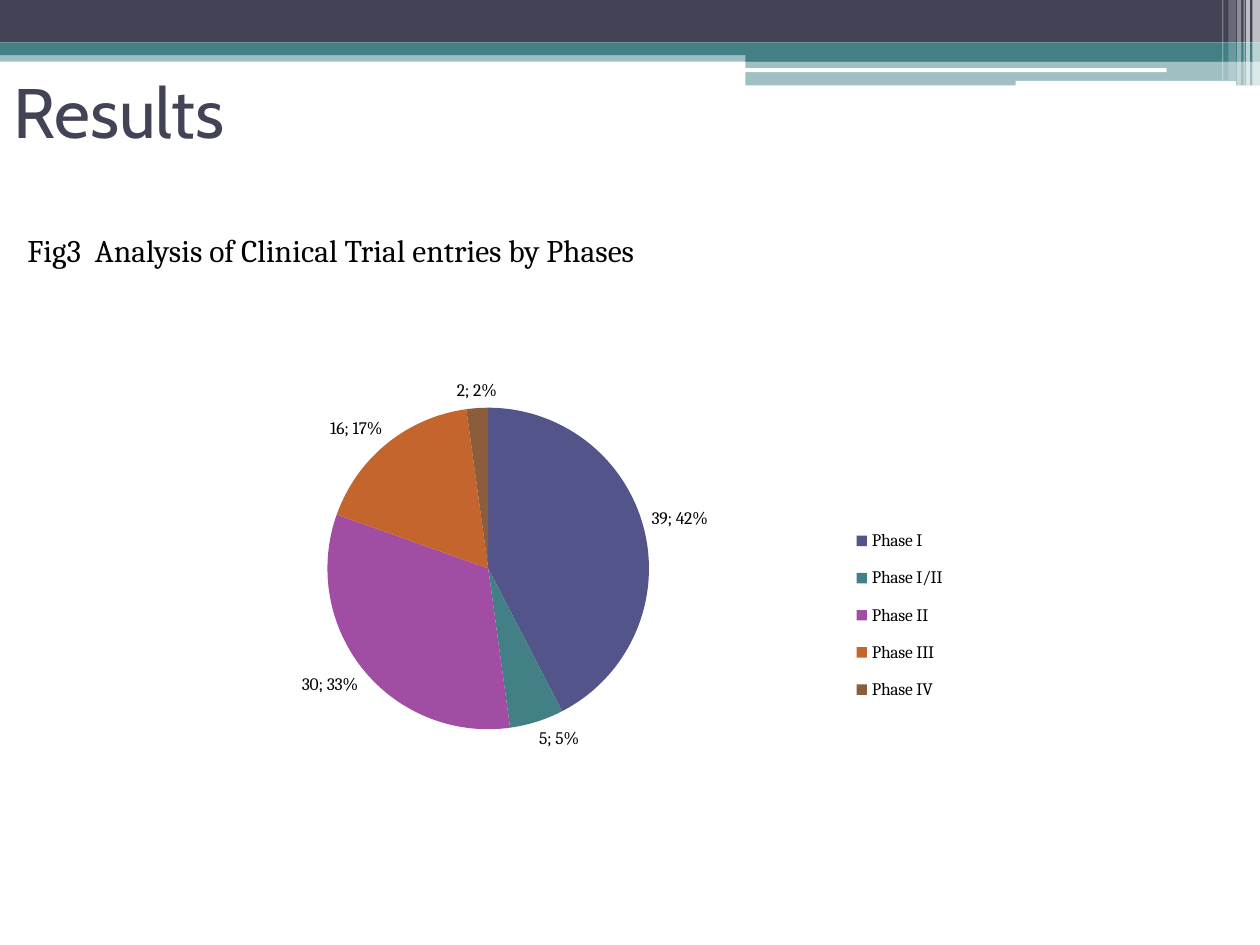
from dataclasses import dataclass

from lxml.etree import SubElement
from pptx import Presentation
from pptx.chart.data import CategoryChartData
from pptx.dml.color import RGBColor
from pptx.enum.chart import XL_CHART_TYPE as ChartType
from pptx.enum.chart import XL_LABEL_POSITION as LabelPosition
from pptx.enum.chart import XL_LEGEND_POSITION as LegendPosition
from pptx.enum.shapes import MSO_SHAPE as Preset
from pptx.enum.text import MSO_ANCHOR as Anchor
from pptx.enum.text import MSO_AUTO_SIZE as AutoSize
from pptx.oxml import parse_xml
from pptx.oxml.ns import nsdecls, qn
from pptx.util import Pt

NAVY, TEAL, WHITE, BLACK = "424456", "438086", "FFFFFF", "000000"


@dataclass(frozen=True)
class Band:
    left: float
    top: float
    width: float
    height: float
    color: str
    opacity: int = 100
    preset: Preset = Preset.RECTANGLE


@dataclass(frozen=True)
class Caption:
    text: str
    left: float
    top: float
    width: float
    height: float
    font: dict
    frame: dict


@dataclass(frozen=True)
class Phase:
    name: str
    entries: int
    color: str


BANDS = [
    Band(0, 28.8, 720, 6.5, TEAL, 50),
    Band(0, 0, 720, 24.3, NAVY),
    Band(0, 24.3, 720, 7.2, TEAL),
    Band(426, 28, 294, 7.2, TEAL),
    Band(426, 34.9, 294, 14, TEAL, 50),
    Band(425.5, 39, 241.2, 2.2, WHITE, preset=Preset.ROUNDED_RECTANGLE),
    Band(580.3, 46.2, 126, 2.8, WHITE, preset=Preset.ROUNDED_RECTANGLE),
    Band(715.6, 0, 4.4, 49, WHITE, 65),
    Band(712, 0, 2.2, 49, WHITE, 65),
    Band(710.6, 0, 0.7, 49, WHITE, 60),
    Band(707, 0, 2.2, 49, WHITE, 40),
    Band(702, 0, 4.3, 46, WHITE, 20),
    Band(698.4, 0, 0.7, 46, WHITE, 30),
]

CAPTIONS = [
    Caption("Results", 0.7, 20.9, 648, 84.2,
            {"name": "Cabin", "size": Pt(40), "color": NAVY},
            {"word_wrap": True, "vertical_anchor": Anchor.MIDDLE}),
    Caption("Fig3  Analysis of Clinical Trial entries by Phases",
            8.6, 128.2, 395.3, 28.8,
            {"name": "Cambria", "size": Pt(18), "color": BLACK},
            {"word_wrap": False, "auto_size": AutoSize.SHAPE_TO_FIT_TEXT}),
]

PHASES = [
    Phase("Phase I", 39, "53548A"),
    Phase("Phase I/II", 5, "438086"),
    Phase("Phase II", 30, "A04DA3"),
    Phase("Phase III", 16, "C4652D"),
    Phase("Phase IV", 2, "8B5D3D"),
]


def rgb(color: str) -> RGBColor:
    return RGBColor.from_string(color)


def format_font(font, values: dict) -> None:
    for name, value in values.items():
        if name == "color":
            font.color.rgb = rgb(value)
        else:
            setattr(font, name, value)


def draw_band(page, band: Band) -> None:
    shape = page.shapes.add_shape(
        band.preset, Pt(band.left), Pt(band.top), Pt(band.width), Pt(band.height))
    shape.shadow.inherit = False
    shape.line.fill.background()
    shape.fill.solid()
    shape.fill.fore_color.rgb = rgb(band.color)
    if band.opacity < 100:
        color = shape.fill._xPr.find(f".//{qn('a:srgbClr')}")
        SubElement(color, qn("a:alpha"), val=str(band.opacity * 1000))


def draw_caption(page, caption: Caption) -> None:
    box = page.shapes.add_textbox(
        Pt(caption.left), Pt(caption.top), Pt(caption.width), Pt(caption.height))
    for name, value in caption.frame.items():
        setattr(box.text_frame, name, value)
    span = box.text_frame.paragraphs[0].add_run()
    span.text = caption.text
    format_font(span.font, caption.font)


def manual_layout(x: float, y: float, w: float, h: float, inner: bool = False):
    """Return a chart layout in fractions of the chart area."""
    target = '<c:layoutTarget val="inner"/>' if inner else ""
    return parse_xml(
        f'<c:layout {nsdecls("c")}><c:manualLayout>{target}'
        '<c:xMode val="edge"/><c:yMode val="edge"/>'
        f'<c:x val="{x}"/><c:y val="{y}"/><c:w val="{w}"/><c:h val="{h}"/>'
        "</c:manualLayout></c:layout>")


def replace_layout(parent, layout, position: int) -> None:
    for old in parent.findall(qn("c:layout")):
        parent.remove(old)
    parent.insert(position, layout)


def draw_pie(page, phases: list[Phase]) -> None:
    data = CategoryChartData()
    data.categories = [phase.name for phase in phases]
    data.add_series("Series 1", [phase.entries for phase in phases])
    chart = page.shapes.add_chart(
        ChartType.PIE, Pt(70.6), Pt(207.4), Pt(484.6), Pt(232.6), data).chart
    format_font(chart.font, {"name": "Cambria", "size": Pt(10), "color": BLACK})
    chart.has_title = False

    chart.has_legend = True
    chart.legend.position = LegendPosition.RIGHT
    chart.legend.include_in_layout = False
    replace_layout(chart.legend._element, manual_layout(0.84, 0.37, 0.15, 0.5), 1)

    plot = chart.plots[0]
    plot.vary_by_categories = True
    replace_layout(plot._element.getparent(),
                   manual_layout(0.24, 0.11, 0.38, 0.79, inner=True), 0)
    series = plot.series[0]
    for index, phase in enumerate(phases):
        fill = series.points[index].format.fill
        fill.solid()
        fill.fore_color.rgb = rgb(phase.color)

    labels = series.data_labels
    label_format = {"show_value": True, "show_percentage": True,
                    "position": LabelPosition.OUTSIDE_END}
    for name, value in label_format.items():
        setattr(labels, name, value)
    separator = parse_xml(f'<c:separator {nsdecls("c")}>; </c:separator>')
    labels._element.find(qn("c:showBubbleSize")).addnext(separator)


def main() -> None:
    deck = Presentation()
    deck.slide_width, deck.slide_height = Pt(720), Pt(540)
    page = deck.slides.add_slide(deck.slide_layouts[6])
    for band in BANDS:
        draw_band(page, band)
    for caption in CAPTIONS:
        draw_caption(page, caption)
    draw_pie(page, PHASES)
    deck.save("out.pptx")


if __name__ == "__main__":
    main()
